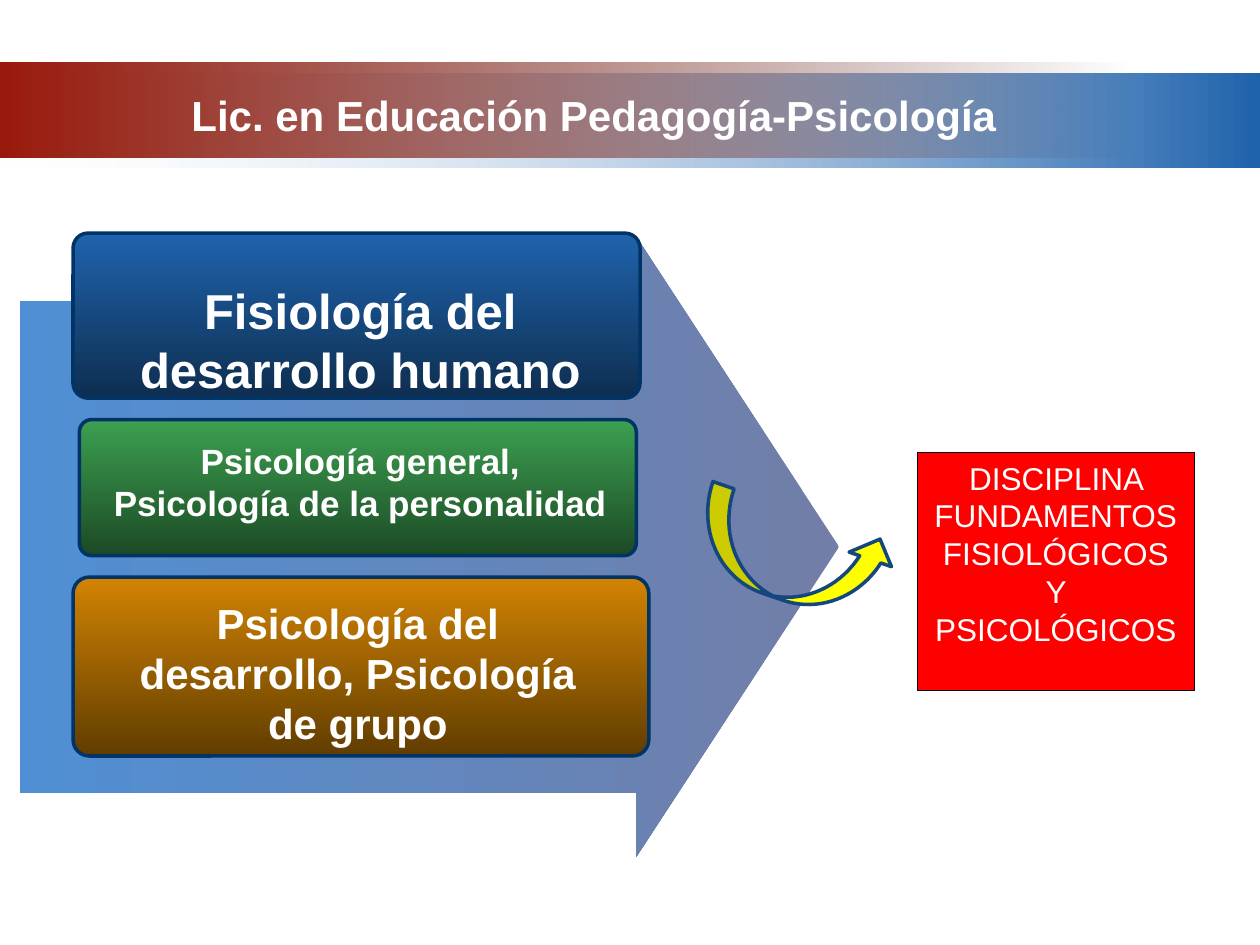
from lxml import etree
from pptx import Presentation
from pptx.dml.color import RGBColor
from pptx.enum.shapes import MSO_SHAPE as SHAPE
from pptx.enum.text import MSO_ANCHOR as ANCHOR, PP_ALIGN as ALIGN
from pptx.oxml.ns import qn
from pptx.util import Inches, Pt

WHITE = "FFFFFF"
LEFTWARD, DOWNWARD = 180, 270  # counter-clockwise gradient angles


def rgb(hex_color):
    return RGBColor.from_string(hex_color)


def add_shape(s, kind, box, fill, angle=None, clear_stop=None, line=None, width=2, adj=()):
    """Fill is one colour, or a pair for a gradient; clear_stop is the transparent end."""
    sp = s.shapes.add_shape(kind, *map(Inches, box))
    sp.shadow.inherit = False
    for i, value in enumerate(adj):
        sp.adjustments[i] = value
    if angle is None:
        sp.fill.solid()
        sp.fill.fore_color.rgb = rgb(fill)
    else:
        sp.fill.gradient()
        sp.fill.gradient_angle = angle
        for stop, color in zip(sp.fill.gradient_stops, fill):
            stop.color.rgb = rgb(color)
        if clear_stop is not None:
            color_el = list(sp._element.spPr.iter(qn("a:srgbClr")))[clear_stop]
            etree.SubElement(color_el, qn("a:alpha")).set("val", "0")
    if line:
        sp.line.color.rgb = rgb(line)
        sp.line.width = Pt(width)
    else:
        sp.line.fill.background()
    return sp


def write(sp, text, size, bold=False, anchor=ANCHOR.TOP):
    tf = sp.text_frame
    tf.word_wrap = True
    tf.vertical_anchor = anchor
    for i, line in enumerate(text.split("\n")):
        p = tf.add_paragraph() if i else tf.paragraphs[0]
        p.alignment = ALIGN.CENTER
        r = p.add_run()
        r.text = line
        r.font.name = "Arial"
        r.font.size = Pt(size)
        r.font.bold = bold
        r.font.color.rgb = rgb(WHITE)


def add_text(s, box, text, **fmt):
    write(s.shapes.add_textbox(*map(Inches, box)), text, **fmt)


def banner(s, left, top, width, height):
    add_shape(s, SHAPE.RECTANGLE, (left, top + 0.08, width, height),
              ("1F63AD", "E3EBF5"), LEFTWARD, clear_stop=1)
    add_shape(s, SHAPE.RECTANGLE, (left, top, width * 0.9, height),
              ("470C05", "99190B"), LEFTWARD, clear_stop=0)
    add_text(s, (left + 0.43, top + 0.1, 8.57, 0.62),
             "Lic. en Educación Pedagogía-Psicología",
             size=24, bold=True, anchor=ANCHOR.MIDDLE)


def subject_card(s, box, colors, text, text_box, size):
    add_shape(s, SHAPE.ROUNDED_RECTANGLE, box, colors, DOWNWARD,
              line="003366", adj=(0.091,))
    add_text(s, text_box, text, size=size, bold=True)


def subjects(s, left, top, width, height):
    add_shape(s, SHAPE.RIGHT_ARROW, (left, top, width, height),
              ("727EA8", "508FD4"), LEFTWARD, adj=(0.793, 0.327))
    cards = [
        ((0.58, 1.85, 4.5, 1.31), ("1F63AD", "0E2E50"),
         "Fisiología del desarrollo humano", (0.69, 2.18, 4.34, 1.05), 28),
        ((0.63, 3.33, 4.42, 1.08), ("3CA051", "1C4A25"),
         "Psicología general,\nPsicología de la personalidad", (0.67, 3.44, 4.38, 1.08), 20),
        ((0.58, 4.58, 4.57, 1.42), ("D28302", "613D01"),
         "Psicología del desarrollo, Psicología de grupo", (0.83, 4.69, 4.02, 1.32), 24),
    ]
    for card in cards:
        subject_card(s, *card)


def discipline(s, left, top, width, height):
    arrow = add_shape(s, SHAPE.CURVED_UP_ARROW, (left - 1.78, top + 0.47, 1.58, 0.71),
                      "FFFF00", line="14477E", adj=(0.25, 0.5, 0.25))
    arrow.rotation = 19
    sp = add_shape(s, SHAPE.RECTANGLE, (left, top, width, height),
                   "FF0000", line="000000", width=0.75)
    write(sp, "DISCIPLINA FUNDAMENTOS FISIOLÓGICOS Y PSICOLÓGICOS", size=18)


def main():
    prs = Presentation()
    prs.slide_width, prs.slide_height = Inches(10), Inches(7.5)
    s = prs.slides.add_slide(prs.slide_layouts[6])
    banner(s, 0, 0.5, 10, 0.75)
    subjects(s, 0.16, 1.88, 6.5, 4.92)
    discipline(s, 7.28, 3.59, 2.2, 1.89)
    prs.save("out.pptx")


if __name__ == "__main__":
    main()
